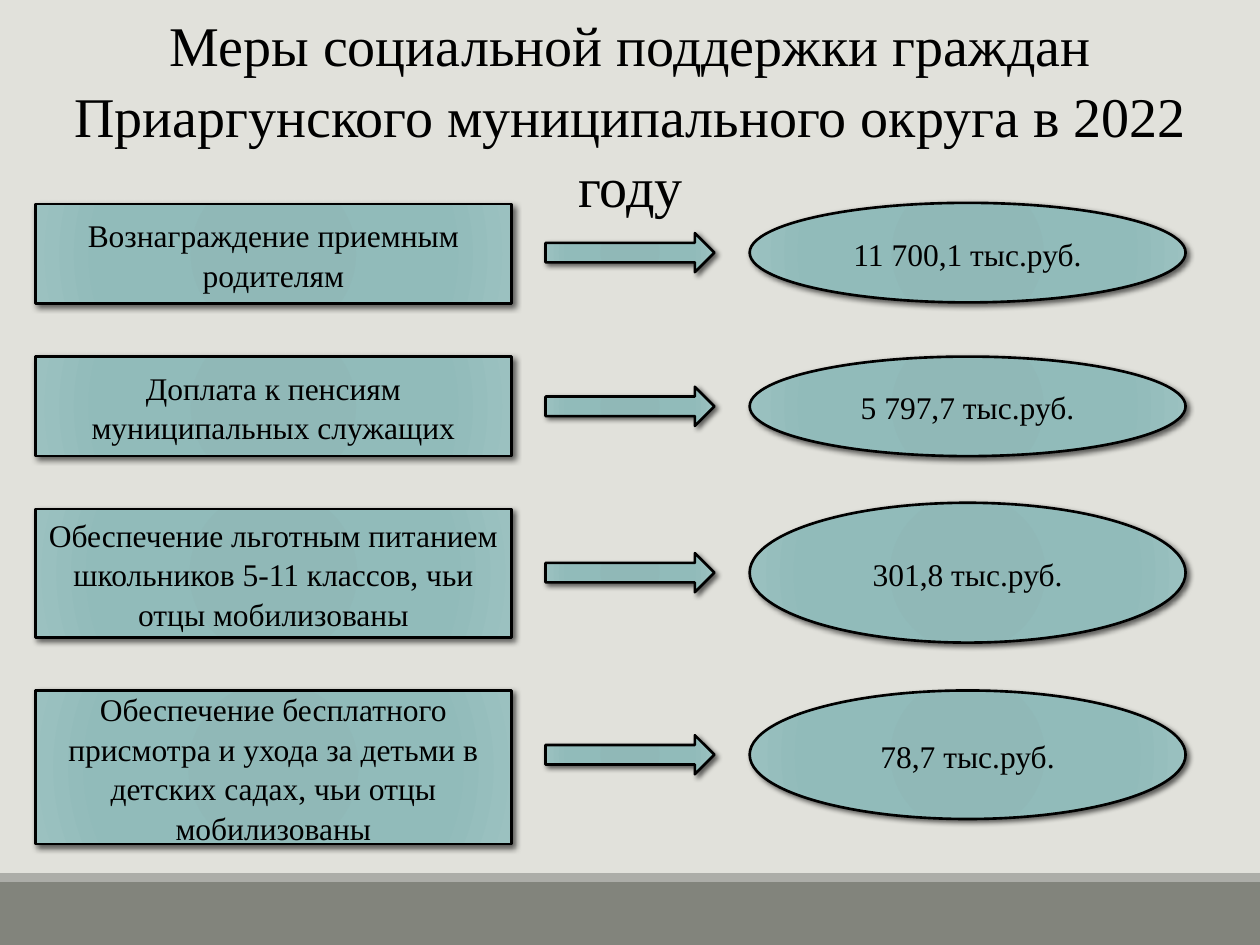
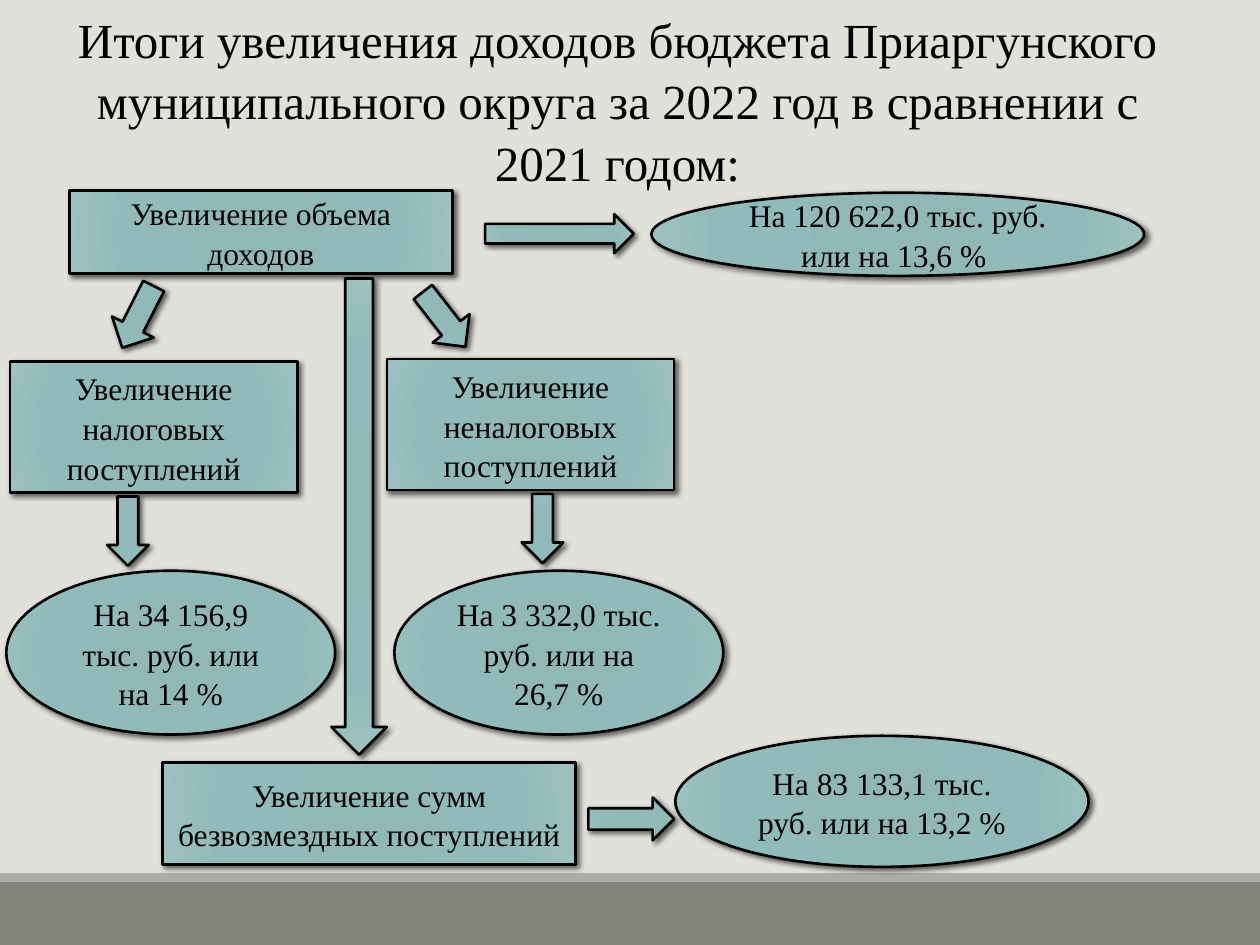
"""Builds two slides on social support measures and budget income growth."""
from dataclasses import dataclass

import pptx
import pptx.dml.color
import pptx.enum.shapes
import pptx.enum.text
import pptx.oxml
import pptx.oxml.ns
import pptx.util

WIDTH, HEIGHT = pptx.util.Inches(10), pptx.util.Inches(7.5)
COLS, ROWS = 100, 75
FONT = "Times New Roman"
BLACK, BACKGROUND = "000000", "E1E1DB"
BAND, BAND_EDGE = "82847C", "ACADA8"
GRADIENT = ((0, "8EB7B6"), (34, "90B8B7"), (70, "91BBBA"), (100, "9BC1C0"))
SHAPE = pptx.enum.shapes.MSO_SHAPE
RECT, OVAL, ARROW = SHAPE.RECTANGLE, SHAPE.OVAL, SHAPE.RIGHT_ARROW
NS = pptx.oxml.ns.nsdecls("a")


@dataclass(frozen=True)
class Node:
    """A figure placed on the grid."""
    kind: int
    left: float
    top: float
    width: float
    height: float
    text: str = ""
    turn: float = 0
    blur: float = 3


@dataclass(frozen=True)
class Measure:
    """A support measure with the rows of its label and its amount."""
    label: str
    amount: str
    label_top: float
    label_height: float
    amount_top: float
    amount_height: float


MEASURES = (
    Measure("Вознаграждение приемным родителям", "11 700,1 тыс.руб.",
            16.2, 7.9, 16.1, 7.9),
    Measure("Доплата к пенсиям муниципальных служащих", "5 797,7 тыс.руб.",
            28.3, 7.9, 28.3, 7.9),
    Measure("Обеспечение льготным питанием школьников 5-11 классов, чьи отцы мобилизованы",
            "301,8 тыс.руб.", 40.4, 10.2, 39.9, 11.1),
    Measure("Обеспечение бесплатного присмотра и ухода за детьми в детских садах, "
            "чьи отцы мобилизованы", "78,7 тыс.руб.", 54.8, 12.2, 54.8, 10.2),
)

GROWTH = (
    Node(RECT, 5.5, 15.1, 30.4, 6.6, "Увеличение объема доходов"),
    Node(OVAL, 51.7, 15.3, 39.1, 6.6, "На 120 622,0 тыс. руб. или на 13,6 % "),
    Node(ARROW, 38.5, 17, 11.8, 3.1),
    Node(ARROW, 8.2, 23.3, 5.5, 3.7, turn=116.9),
    Node(ARROW, 32.5, 23.5, 5.5, 3.7, turn=52.1),
    Node(RECT, 0.8, 28.7, 22.8, 10.4, "Увеличение налоговых поступлений"),
    Node(OVAL, 0.5, 45.3, 26.1, 13, "На 34 156,9 тыс. руб. или на 14 %"),
    Node(ARROW, 7.4, 40.5, 5.5, 3.3, turn=90),
    Node(RECT, 30.7, 28.5, 22.8, 10.4, "Увеличение неналоговых поступлений"),
    Node(OVAL, 31.3, 45.3, 26.1, 13, "На 3 332,0 тыс. руб. или на 26,7 %"),
    Node(ARROW, 9.6, 38.8, 37.8, 4.4, turn=90),
    Node(RECT, 12.9, 60.5, 32.8, 8.1, "Увеличение сумм безвозмездных поступлений"),
    Node(ARROW, 40.3, 40.3, 5.5, 3.3, turn=90),
    Node(ARROW, 46.7, 63.3, 6.8, 3.4),
    Node(OVAL, 53.6, 58.4, 32.8, 10.4, "На 83 133,1 тыс. руб. или на 13,2 %"),
)


def rgb(value: str) -> pptx.dml.color.RGBColor:
    """Turn a hex string into a colour."""
    return pptx.dml.color.RGBColor.from_string(value)


def frame(left: float, top: float, width: float, height: float) -> tuple[int, ...]:
    """Convert grid columns and rows to lengths."""
    return (int(WIDTH * left / COLS), int(HEIGHT * top / ROWS),
            int(WIDTH * width / COLS), int(HEIGHT * height / ROWS))


def write(tf, text: str, *, size: float = 18, color: str = BLACK,
          spacing: float = 1.05) -> None:
    """Write one centred, wrapped paragraph."""
    tf.word_wrap = True
    p = tf.paragraphs[0]
    p.alignment = pptx.enum.text.PP_ALIGN.CENTER
    p.line_spacing = spacing
    r = p.add_run()
    r.text = text
    r.font.name, r.font.size = FONT, pptx.util.Pt(size)
    r.font.color.rgb = rgb(color)


def add_gradient(sp) -> None:
    """Fill a shape with the shared radial gradient."""
    sp.fill.gradient()
    plain = sp.element.spPr.find(pptx.oxml.ns.qn("a:gradFill"))
    stops = "".join(f'<a:gs pos="{at * 1000}"><a:srgbClr val="{color}"/></a:gs>'
                    for at, color in GRADIENT)
    radial = pptx.oxml.parse_xml(
        f'<a:gradFill {NS} rotWithShape="1"><a:gsLst>{stops}</a:gsLst>'
        '<a:path path="circle"><a:fillToRect l="100000" t="100000" r="100000" b="100000"/>'
        '</a:path></a:gradFill>')
    plain.getparent().replace(plain, radial)


def add_shadow(sp, blur: float) -> None:
    """Give a shape the shared soft shadow."""
    sp.shadow.inherit = False
    effects = sp.element.spPr.find(pptx.oxml.ns.qn("a:effectLst"))
    effects.append(pptx.oxml.parse_xml(
        f'<a:outerShdw {NS} blurRad="{pptx.util.Pt(blur)}" dist="{pptx.util.Pt(2)}" '
        f'dir="2700000" rotWithShape="0"><a:srgbClr val="{BLACK}">'
        '<a:alpha val="60000"/></a:srgbClr></a:outerShdw>'))


def add_node(s, node: Node) -> None:
    """Draw a box, oval or arrow."""
    sp = s.shapes.add_shape(
        node.kind, *frame(node.left, node.top, node.width, node.height))
    sp.rotation = node.turn
    add_gradient(sp)
    sp.line.color.rgb, sp.line.width = rgb(BLACK), pptx.util.Pt(1.5)
    add_shadow(sp, node.blur)
    if node.text:
        write(sp.text_frame, node.text)


def add_band(s, top: float, height: float, color: str) -> None:
    """Draw a full-width band."""
    sp = s.shapes.add_shape(RECT, *frame(0, top, COLS, height))
    sp.shadow.inherit = False
    sp.fill.solid()
    sp.fill.fore_color.rgb = rgb(color)
    sp.line.fill.background()


def add_slide(prs, title: str, place: tuple[float, ...], size: float):
    """Add a slide with the shared background, bands and title."""
    s = prs.slides.add_slide(prs.slide_layouts[6])
    s.background.fill.solid()
    s.background.fill.fore_color.rgb = rgb(BACKGROUND)
    add_band(s, 70, 5, BAND)
    add_band(s, 69.3, 0.7, BAND_EDGE)
    write(s.shapes.add_textbox(*frame(*place)).text_frame, title, size=size)
    return s


def measure_nodes(m: Measure) -> tuple[Node, ...]:
    """Lay out a measure as label, amount and the arrow between them."""
    arrow_height = 3.1
    arrow_top = m.amount_top + (m.amount_height - arrow_height) / 2
    return (Node(RECT, 2.8, m.label_top, 37.8, m.label_height, m.label, blur=3.5),
            Node(OVAL, 59.5, m.amount_top, 34.6, m.amount_height, m.amount),
            Node(ARROW, 43.3, arrow_top, 13.4, arrow_height))


def main() -> None:
    """Build and save the presentation."""
    prs = pptx.Presentation()
    prs.slide_width, prs.slide_height = WIDTH, HEIGHT
    s = add_slide(prs, "Меры социальной поддержки граждан Приаргунского "
                  "муниципального округа в 2022 году", (1.6, 0.1, 96.9, 17.2), 32)
    for m in MEASURES:
        for node in measure_nodes(m):
            add_node(s, node)
    s = add_slide(prs, "Итоги увеличения доходов бюджета Приаргунского муниципального "
                  "округа за 2022 год в сравнении с 2021 годом:", (3.5, 0, 91, 15.1), 28)
    for node in GROWTH:
        add_node(s, node)
    prs.save("out.pptx")


if __name__ == "__main__":
    main()
